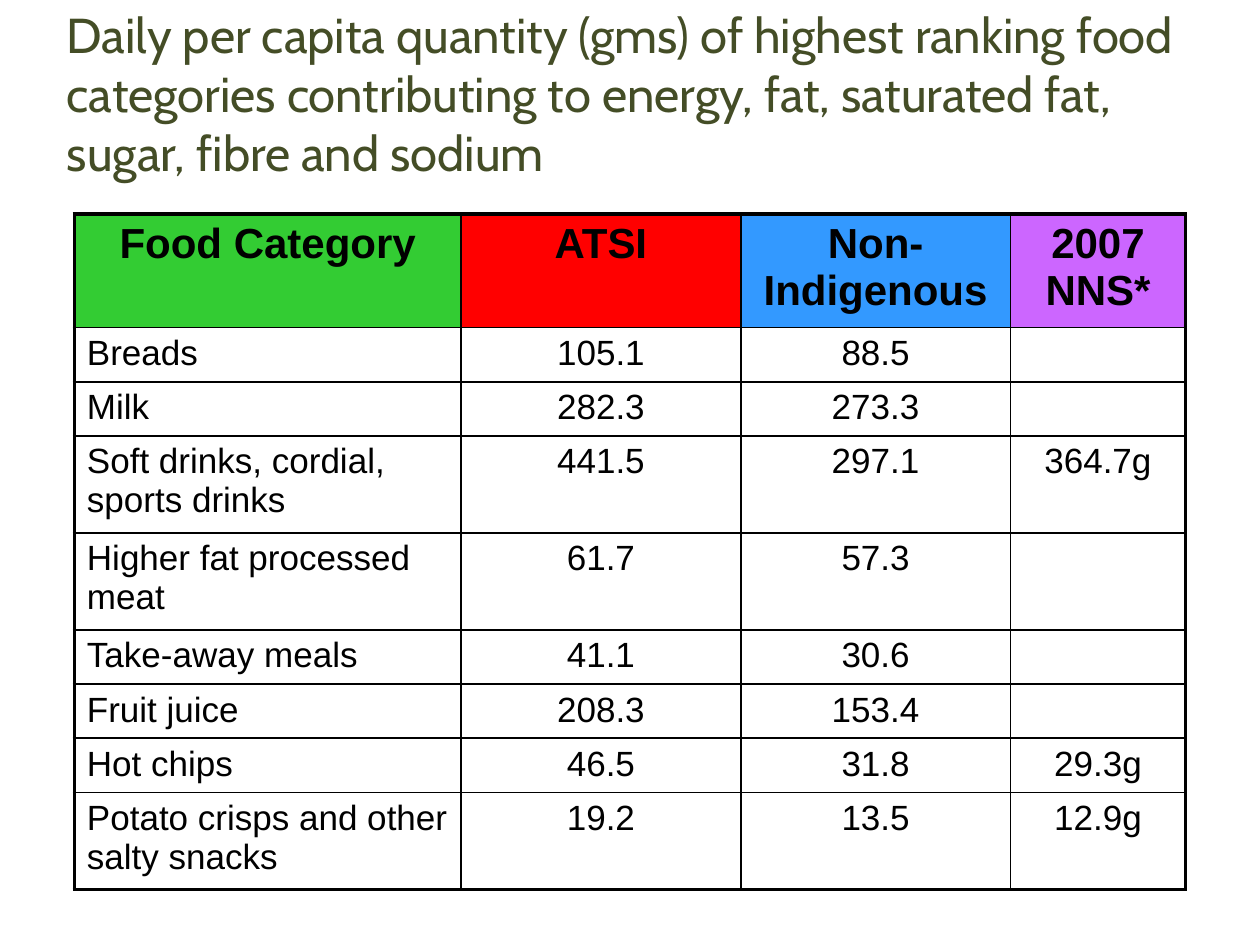
from pptx import Presentation
from pptx.dml.color import RGBColor
from pptx.enum.text import MSO_ANCHOR, PP_ALIGN
from pptx.oxml.ns import qn
from pptx.util import Inches, Pt
from lxml import etree

LEFT, CENTER = PP_ALIGN.LEFT, PP_ALIGN.CENTER
MIDDLE = MSO_ANCHOR.MIDDLE
TITLE_ONLY = 5

TITLE = ("Daily per capita quantity (gms) of highest ranking food categories "
         "contributing to energy, fat, saturated fat, sugar, fibre and sodium")
FOODS = [
    ("Food Category", "ATSI", "Non-Indigenous", "2007 NNS*"),
    ("Breads", "105.1", "88.5", ""),
    ("Milk", "282.3", "273.3", ""),
    ("Soft drinks, cordial, sports drinks", "441.5", "297.1", "364.7g"),
    ("Higher fat processed meat", "61.7", "57.3", ""),
    ("Take-away meals", "41.1", "30.6", ""),
    ("Fruit juice", "208.3", "153.4", ""),
    ("Hot chips", "46.5", "31.8", "29.3g"),
    ("Potato crisps and other salty snacks", "19.2", "13.5", "12.9g"),
]
HEADER_FILLS = ["33CC33", "FF0000", "3399FF", "CC66FF"]
COLUMN_WIDTHS = [3.07, 2.22, 2.14, 1.39]
HEADER_HEIGHT, SINGLE_HEIGHT, DOUBLE_HEIGHT = 0.9, 0.43, 0.77
TWO_LINE_LENGTH = 20
OUTER_LINE, INNER_LINE = 2.25, 1


def color(value):
    """Return the colour for a hex string."""
    return RGBColor.from_string(value)


def style_paragraph(para, font_name, size, value, align, bold=False):
    """Set the font and alignment of a paragraph."""
    para.alignment = align
    font = para.font
    font.name, font.size, font.bold = font_name, Pt(size), bold
    font.color.rgb = color(value)


def add_title(slide):
    """Place and format the slide title."""
    title = slide.shapes.title
    title.left, title.top = Inches(0.43), Inches(0)
    title.width, title.height = Inches(9.17), Inches(1.48)
    title.text_frame.text = TITLE
    title.text_frame.word_wrap = True
    title.text_frame.vertical_anchor = MIDDLE
    style_paragraph(title.text_frame.paragraphs[0], "Cabin", 28, "444D26", LEFT)


def set_borders(cell, on_edge):
    """Draw black borders, heavier on the table's outer edges."""
    properties = cell._tc.get_or_add_tcPr()
    for side in ("L", "R", "T", "B"):
        width = OUTER_LINE if on_edge[side] else INNER_LINE
        line = etree.SubElement(properties, qn(f"a:ln{side}"), w=str(Pt(width)))
        fill = etree.SubElement(line, qn("a:solidFill"))
        etree.SubElement(fill, qn("a:srgbClr"), val="000000")


def set_fill(cell, value, opacity=100):
    """Fill a cell with a colour at an opacity in percent."""
    cell.fill.solid()
    cell.fill.fore_color.rgb = color(value)
    if opacity < 100:
        tone = cell._tc.tcPr.find(qn("a:solidFill")).find(qn("a:srgbClr"))
        etree.SubElement(tone, qn("a:alpha"), val=str(opacity * 1000))


def row_height(row_index, food):
    """Return the row height in inches that the food name needs."""
    if row_index == 0:
        return HEADER_HEIGHT
    return DOUBLE_HEIGHT if len(food) > TWO_LINE_LENGTH else SINGLE_HEIGHT


def add_food_table(slide):
    """Add the table of food quantities."""
    heights = [row_height(index, row[0]) for index, row in enumerate(FOODS)]
    last_row, last_column = len(FOODS) - 1, len(COLUMN_WIDTHS) - 1
    table = slide.shapes.add_table(
        len(FOODS), len(COLUMN_WIDTHS), Inches(0.59), Inches(1.7),
        Inches(sum(COLUMN_WIDTHS)), Inches(sum(heights))).table
    table.first_row = table.horz_banding = False
    for column, width in zip(table.columns, COLUMN_WIDTHS):
        column.width = Inches(width)
    for r, (values, height) in enumerate(zip(FOODS, heights)):
        table.rows[r].height = Inches(height)
        is_header = r == 0
        for c, text in enumerate(values):
            cell = table.cell(r, c)
            cell.text = text
            align = CENTER if is_header or c > 0 else LEFT
            style_paragraph(cell.text_frame.paragraphs[0], "Arial",
                            24 if is_header else 20, "000000", align, is_header)
            set_borders(cell, {"L": c == 0, "R": c == last_column,
                               "T": is_header, "B": r == last_row})
            if is_header:
                set_fill(cell, HEADER_FILLS[c])
            else:
                set_fill(cell, "FFFFFF", 50)


def main():
    """Build the slide and save the deck."""
    deck = Presentation()
    deck.slide_width, deck.slide_height = Inches(10), Inches(7.5)
    slide = deck.slides.add_slide(deck.slide_layouts[TITLE_ONLY])
    add_title(slide)
    add_food_table(slide)
    deck.save("out.pptx")


if __name__ == "__main__":
    main()
